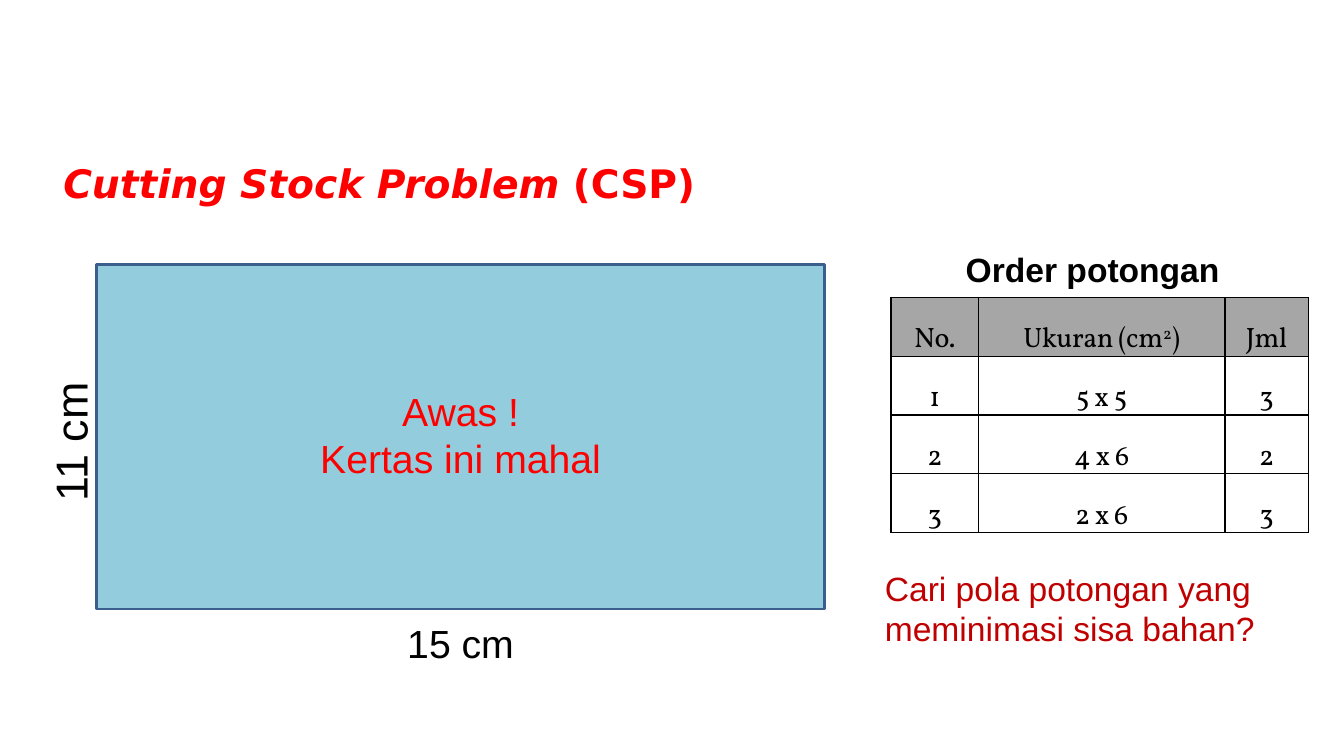
"""Build the Cutting Stock Problem slide with its sheet and order table."""
import pptx
import pptx.dml.color
import pptx.enum.text
import pptx.oxml
import pptx.util
from pptx.oxml.ns import nsdecls

Pt = pptx.util.Pt
Align = pptx.enum.text.PP_ALIGN
Anchor = pptx.enum.text.MSO_ANCHOR
COLORS = {"red": "FF0000", "dark red": "C00000", "black": "000000",
          "sheet": "93CDDD", "sheet line": "3A5F8C", "header": "A6A6A6"}


def rgb(name):
    return pptx.dml.color.RGBColor.from_string(COLORS[name])


def style(paragraph, font_name, size, color, alignment, bold=False):
    paragraph.alignment = alignment
    paragraph.font.name = font_name
    paragraph.font.size = Pt(size)
    paragraph.font.bold = bold
    paragraph.font.color.rgb = rgb(color)


presentation = pptx.Presentation()
presentation.slide_width, presentation.slide_height = Pt(960), Pt(540)
slide = presentation.slides.add_slide(presentation.slide_layouts[5])

title = slide.shapes.title
title.left, title.top, title.width, title.height = Pt(38), Pt(110), Pt(874), Pt(41)
title.text_frame.vertical_anchor = Anchor.MIDDLE
title.text_frame.auto_size = pptx.enum.text.MSO_AUTO_SIZE.NONE
paragraph = title.text_frame.paragraphs[0]
style(paragraph, "DejaVu Sans", 28, "red", Align.LEFT, bold=True)
for text, italic in [("Cutting Stock Problem", True), (" (CSP)", False)]:
    run = paragraph.add_run()
    run.text = text
    run.font.italic = italic

sheet = slide.shapes.add_shape(pptx.enum.shapes.MSO_SHAPE.RECTANGLE,
                               Pt(69), Pt(189), Pt(520), Pt(246))
sheet.shadow.inherit = False
sheet.fill.solid()
sheet.fill.fore_color.rgb = rgb("sheet")
sheet.line.color.rgb = rgb("sheet line")
sheet.line.width = Pt(2)

labels = [
    ("15 cm", (69, 434, 520, 42), 28, "black", Align.CENTER, False, "horz"),
    ("11 cm", (13, 189, 56, 246), 32, "black", Align.CENTER, False, "vert270"),
    ("Awas !\nKertas ini mahal", (69, 272, 520, 72), 28, "red", Align.CENTER, False, "horz"),
    ("Order potongan", (628.5, 176.5, 304, 30), 24, "black", Align.CENTER, True, "horz"),
    ("Cari pola potongan yang meminimasi sisa bahan?", (632, 403, 320, 60),
     24, "dark red", Align.LEFT, False, "horz"),
]
for text, box, size, color, alignment, bold, direction in labels:
    frame = slide.shapes.add_textbox(*map(Pt, box)).text_frame
    frame.word_wrap = True
    frame.vertical_anchor = Anchor.BOTTOM
    frame.margin_left = frame.margin_right = frame.margin_bottom = 0
    frame.margin_top = Pt(3.6)
    frame._txBody.bodyPr.set("vert", direction)
    frame.text = text
    for paragraph in frame.paragraphs:
        style(paragraph, "Arial", size, color, alignment, bold)

orders = [("No.", "Ukuran (cm2)", "Jml"),
          ("1", "5 x 5", "3"), ("2", "4 x 6", "2"), ("3", "2 x 6", "3")]
column_widths = [62.5, 176, 59.5]
row_height = 42
table = slide.shapes.add_table(len(orders), len(column_widths), Pt(636.5), Pt(212.5),
                               Pt(sum(column_widths)), Pt(row_height * len(orders))).table
table.horz_banding = False
table.first_row = False
for column, width in zip(table.columns, column_widths):
    column.width = Pt(width)
for row_index, order in enumerate(orders):
    table.rows[row_index].height = Pt(row_height)
    for column_index, text in enumerate(order):
        cell = table.cell(row_index, column_index)
        cell.vertical_anchor = Anchor.MIDDLE
        cell.margin_top, cell.margin_bottom = Pt(3), 0
        paragraph = cell.text_frame.paragraphs[0]
        paragraph.line_spacing = 1.5
        style(paragraph, "Vollkorn", 20, "black", Align.CENTER)
        paragraph.font._element.set("spc", "-30")
        before, unit, after = text.partition("cm2")
        for part, baseline in [(before + unit[:2], 0), (unit[2:], 30000), (after, 0)]:
            if part:
                run = paragraph.add_run()
                run.text = part
                run.font._element.set("baseline", str(baseline))
        for side in ("lnL", "lnR", "lnT", "lnB"):
            cell._tc.get_or_add_tcPr().append(pptx.oxml.parse_xml(
                f'<a:{side} {nsdecls("a")} w="{Pt(1)}"><a:solidFill>'
                f'<a:srgbClr val="{COLORS["black"]}"/></a:solidFill></a:{side}>'))
        if row_index == 0:
            cell.fill.solid()
            cell.fill.fore_color.rgb = rgb("header")
        else:
            cell.fill.background()

presentation.save("out.pptx")
